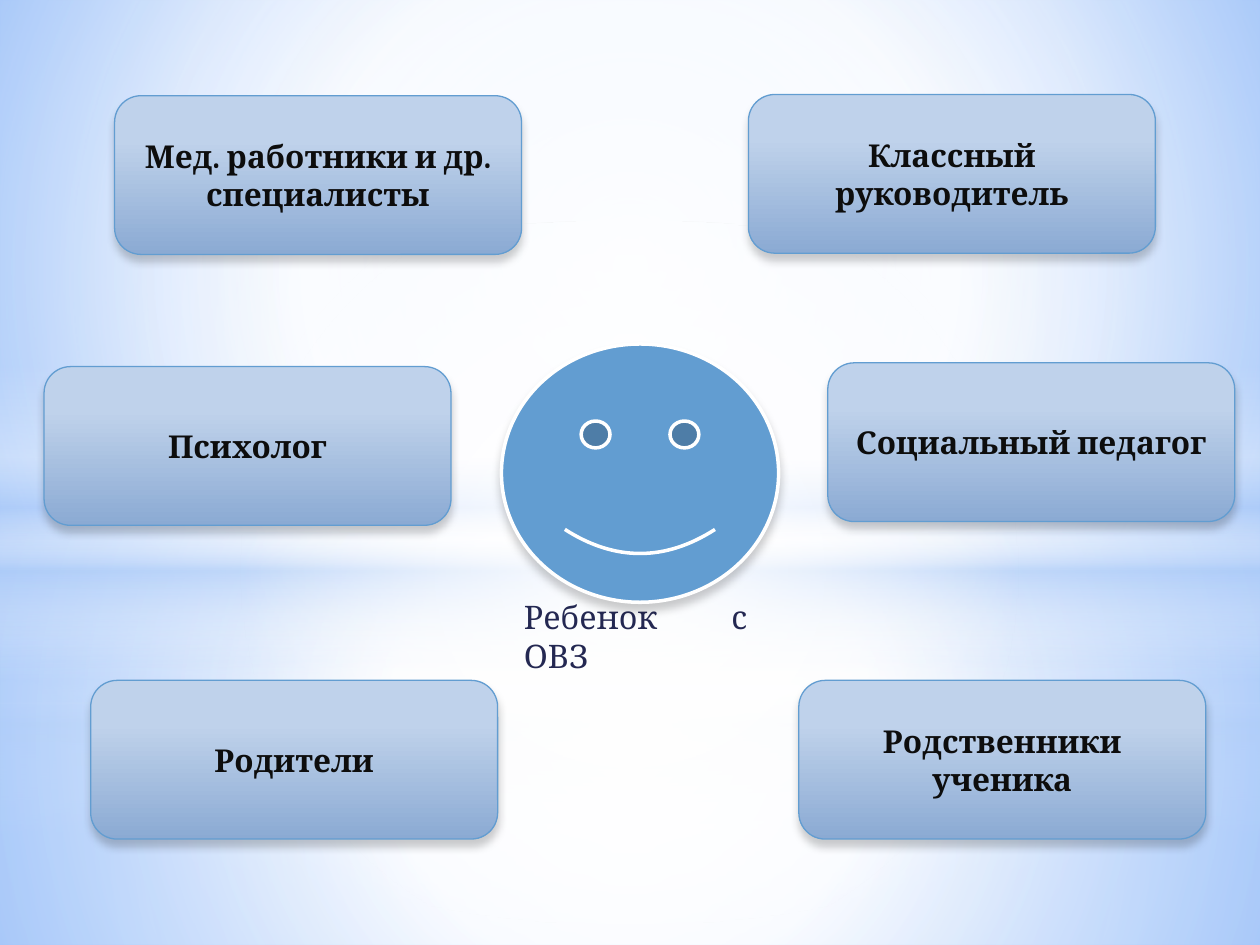
from dataclasses import dataclass

from lxml.etree import SubElement
from pptx import Presentation
from pptx.dml.color import RGBColor
from pptx.enum.shapes import MSO_SHAPE
from pptx.enum.text import MSO_ANCHOR, PP_ALIGN
from pptx.oxml.ns import qn
from pptx.util import Inches, Pt


@dataclass(frozen=True)
class Theme:
    font: str = "Cambria"
    label_size: float = 18
    caption_size: float = 18.5
    label: str = "0D0D0D"
    caption: str = "242852"
    accent: str = "629DD1"
    white: str = "FFFFFF"
    haze: str = "ACCBF9"
    card_top: str = "BFD2EB"
    card_bottom: str = "8BAAD3"
    sky_center: str = "95C0FF"
    sky_edge: str = "5599FF"
    shadow: str = "000000"


THEME = Theme()
SLIDE_WIDTH, SLIDE_HEIGHT = 10, 7.5
CENTER = (50, 50, 50, 50)
CARD_SIZE = (3.23, 1.26)
CARDS = [
    ("Мед. работники и др. специалисты", 0.91, 0.76),
    ("Психолог", 0.35, 2.91),
    ("Социальный педагог", 6.57, 2.88),
    ("Родители", 0.72, 5.4),
    ("Родственники ученика", 6.34, 5.4),
    ("Классный руководитель", 5.94, 0.75),
]


def add_color(parent, color, opacity=100):
    node = SubElement(parent, qn("a:srgbClr"), val=color)
    if opacity < 100:
        SubElement(node, qn("a:alpha"), val=str(opacity * 1000))


def fill_gradient(fill, owner, stops, focus=None):
    """Fill with (position, color[, opacity]) stops: around focus, or top down."""
    fill.gradient()
    gradient = owner.find(".//" + qn("a:gradFill"))
    for child in list(gradient):
        gradient.remove(child)
    stop_list = SubElement(gradient, qn("a:gsLst"))
    for position, *color in stops:
        add_color(SubElement(stop_list, qn("a:gs"), pos=str(position * 1000)), *color)
    if focus:
        circle = SubElement(gradient, qn("a:path"), path="circle")
        sides = {side: str(value * 1000) for side, value in zip("ltrb", focus)}
        SubElement(circle, qn("a:fillToRect"), **sides)
    else:
        SubElement(gradient, qn("a:lin"), ang="5400000", scaled="0")


def add_shape(slide, kind, box):
    shape = slide.shapes.add_shape(kind, *(Inches(length) for length in box))
    shape.shadow.inherit = False
    return shape


def outline(shape, color, width):
    shape.line.color.rgb = RGBColor.from_string(color)
    shape.line.width = Pt(width)


def drop_shadow(shape):
    effects = shape._element.spPr.find(qn("a:effectLst"))
    shadow = SubElement(effects, qn("a:outerShdw"), blurRad=str(Pt(5)),
                        dist=str(Pt(4)), dir="5400000", rotWithShape="0")
    add_color(shadow, THEME.shadow, 20)


def write(shape, text, size, color, align, bold=False):
    frame = shape.text_frame
    frame.word_wrap = True
    frame.vertical_anchor = MSO_ANCHOR.MIDDLE
    frame.text = text
    paragraph = frame.paragraphs[0]
    paragraph.alignment = align
    font = paragraph.runs[0].font
    font.name, font.size, font.bold = THEME.font, Pt(size), bold
    font.color.rgb = RGBColor.from_string(color)
    return paragraph


def paint_sky(slide):
    fill_gradient(slide.background.fill, slide._element,
                  [(0, THEME.sky_center), (60, THEME.white), (100, THEME.sky_edge)],
                  (20, 10, 20, 60))


def add_haze(slide, horizon, band_top, fade, glow_end):
    """Light above and below the horizon, a misty band and a central glow."""
    white, haze = THEME.white, THEME.haze
    rectangle, oval = MSO_SHAPE.RECTANGLE, MSO_SHAPE.OVAL
    layers = [
        (rectangle, horizon, SLIDE_HEIGHT - horizon, CENTER,
         [(0, white, 92 - fade), (37, white, 77 - fade), (100, haze, 80 - fade)]),
        (rectangle, 0, horizon, CENTER,
         [(0, white, 90 - fade), (48, white, 63 - fade), (100, haze, 80 - fade)]),
        (rectangle, band_top, 2.5, None,
         [(0, white, 0), (29, white, 30), (45, haze, 40),
          (55, white, 26), (65, haze, 60), (100, white, 0)]),
        (oval, 1.75, 5.58, CENTER, [(0, white), (glow_end, white, 0)]),
    ]
    for kind, top, height, focus, stops in layers:
        layer = add_shape(slide, kind, (0, top, SLIDE_WIDTH, height))
        layer.line.fill.background()
        fill_gradient(layer.fill, layer._element, stops, focus)


def add_caption(slide, box):
    caption = slide.shapes.add_textbox(*(Inches(length) for length in box))
    paragraph = write(caption, "Ребенок с ОВЗ", THEME.caption_size,
                      THEME.caption, PP_ALIGN.JUSTIFY)
    paragraph.space_after = Pt(3)


def add_child_face(slide, box):
    face = add_shape(slide, MSO_SHAPE.SMILEY_FACE, box)
    face.fill.solid()
    face.fill.fore_color.rgb = RGBColor.from_string(THEME.accent)
    outline(face, THEME.white, 2)
    drop_shadow(face)


def add_card(slide, box, label):
    card = add_shape(slide, MSO_SHAPE.ROUNDED_RECTANGLE, box)
    fill_gradient(card.fill, card._element,
                  [(28, THEME.card_top), (100, THEME.card_bottom)])
    outline(card, THEME.accent, 0.75)
    drop_shadow(card)
    write(card, label, THEME.label_size, THEME.label, PP_ALIGN.CENTER, bold=True)


def main():
    deck = Presentation()
    deck.slide_width, deck.slide_height = Inches(SLIDE_WIDTH), Inches(SLIDE_HEIGHT)
    slide = deck.slides.add_slide(deck.slide_layouts.get_by_name("Blank"))
    paint_sky(slide)
    add_haze(slide, horizon=5.58, band_top=4.12, fade=1, glow_end=56)
    add_haze(slide, horizon=4.23, band_top=2.9, fade=0, glow_end=54)
    add_caption(slide, (4.06, 4.77, 1.97, 0.55))
    add_child_face(slide, (3.98, 2.73, 2.2, 2.05))
    for label, left, top in CARDS:
        add_card(slide, (left, top, *CARD_SIZE), label)
    deck.save("out.pptx")


if __name__ == "__main__":
    main()
